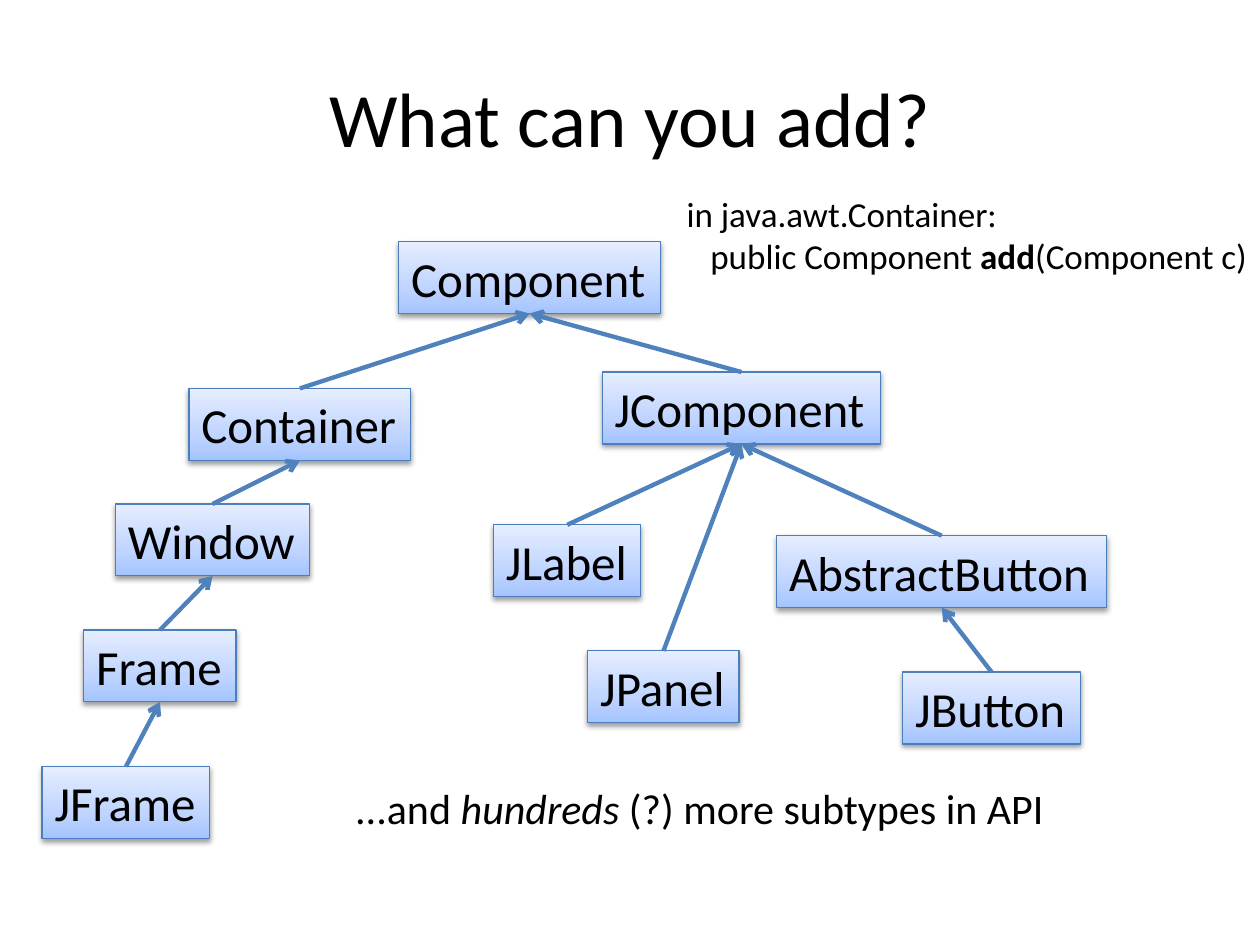
from lxml import etree
from pptx import Presentation
from pptx import util as u
from pptx.dml.color import RGBColor
from pptx.enum import shapes, text
from pptx.oxml import ns

Cm, Pt = u.Cm, u.Pt
hues = {"ink": "000000", "edge": "4B7EBC", "link": "4F81BD",
        "low": "A4C4FF", "mid": "BFD4FF", "top": "E6EEFF"}


def node(base, tag, **attrs):
    return etree.SubElement(base, ns.qn("a:" + tag), attrs)


def write(para, size, *runs):
    for words, style in runs:
        run = para.add_run()
        run.text = words
        font = run.font
        font.name, font.size = "Calibri", Pt(size)
        font.bold, font.italic = style == "bold", style == "italic"
        font.color.rgb = RGBColor.from_string(hues["ink"])


deck = Presentation()
deck.slide_width, deck.slide_height = Cm(25.4), Cm(19.05)
slide = deck.slides.add_slide(deck.slide_layouts[5])

title = slide.shapes.title
title.left, title.top, title.width, title.height = Cm(1.27), Cm(0.76), Cm(22.86), Cm(3.18)
title.text_frame.vertical_anchor = text.MSO_ANCHOR.MIDDLE
para = title.text_frame.paragraphs[0]
para.alignment = text.PP_ALIGN.CENTER
write(para, 44, ("What can you add?", ""))

note = slide.shapes.add_textbox(Cm(13.59), Cm(3.76), Cm(11.91), Cm(1.96)).text_frame
note.word_wrap = False
write(note.paragraphs[0], 20, ("in java.awt.Container:", ""))
para = note.add_paragraph()
para._p.get_or_add_pPr().set("marL", str(Cm(0.48)))
write(para, 20, ("public Component ", ""), ("add", "bold"), ("(Component c)", ""))

types = [
    ("Component", None, 8.04, 4.87, 5.28),
    ("Container", "Component", 3.81, 7.83, 4.47),
    ("Window", "Container", 2.33, 10.16, 3.91),
    ("Frame", "Window", 1.69, 12.7, 3.07),
    ("JFrame", "Frame", 0.85, 15.45, 3.38),
    ("JComponent", "Component", 12.14, 7.5, 5.61),
    ("JLabel", "JComponent", 9.95, 10.58, 2.97),
    ("AbstractButton", "JComponent", 15.66, 10.8, 6.65),
    ("JButton", "AbstractButton", 18.2, 13.55, 3.58),
    ("JPanel", "JComponent", 11.85, 13.12, 3.05),
]
boxes = {}
for name, _, left, top, width in types:
    box = slide.shapes.add_shape(shapes.MSO_SHAPE.RECTANGLE,
                                 Cm(left), Cm(top), Cm(width), Cm(1.45))
    boxes[name] = box
    box.fill.gradient()
    box.fill.gradient_angle = 90
    stops = box._element.spPr.find(".//" + ns.qn("a:gsLst"))
    for stop in list(stops):
        stops.remove(stop)
    for place, hue in (("0", "low"), ("35000", "mid"), ("100000", "top")):
        node(node(stops, "gs", pos=place), "srgbClr", val=hues[hue])
    box.line.color.rgb = RGBColor.from_string(hues["edge"])
    box.line.width = Pt(0.75)
    box.shadow.inherit = False
    glow = box._element.spPr.find(ns.qn("a:effectLst"))
    shade = node(glow, "outerShdw", blurRad=str(Pt(3.1)), dist=str(Pt(1.6)),
                 dir="5400000", rotWithShape="0")
    node(node(shade, "srgbClr", val=hues["ink"]), "alpha", val="38000")
    box.text_frame.word_wrap = False
    para = box.text_frame.paragraphs[0]
    para.alignment = text.PP_ALIGN.LEFT
    write(para, 28, (name, ""))

for name, base, *_ in types:
    if base:
        link = slide.shapes.add_connector(shapes.MSO_CONNECTOR.STRAIGHT, 0, 0, 0, 0)
        link.begin_connect(boxes[name], 0)
        link.end_connect(boxes[base], 2)
        link.line.color.rgb = RGBColor.from_string(hues["link"])
        link.line.width = Pt(2.5)
        node(link.line._get_or_add_ln(), "tailEnd", type="arrow")
        node(link._element.spPr, "effectLst")

more = slide.shapes.add_textbox(Cm(6.91), Cm(15.65), Cm(18.29), Cm(1.27)).text_frame
more.word_wrap = True
write(more.paragraphs[0], 24, ("...and ", ""), ("hundreds", "italic"),
      (" (?) more subtypes in API", ""))

deck.save("out.pptx")
